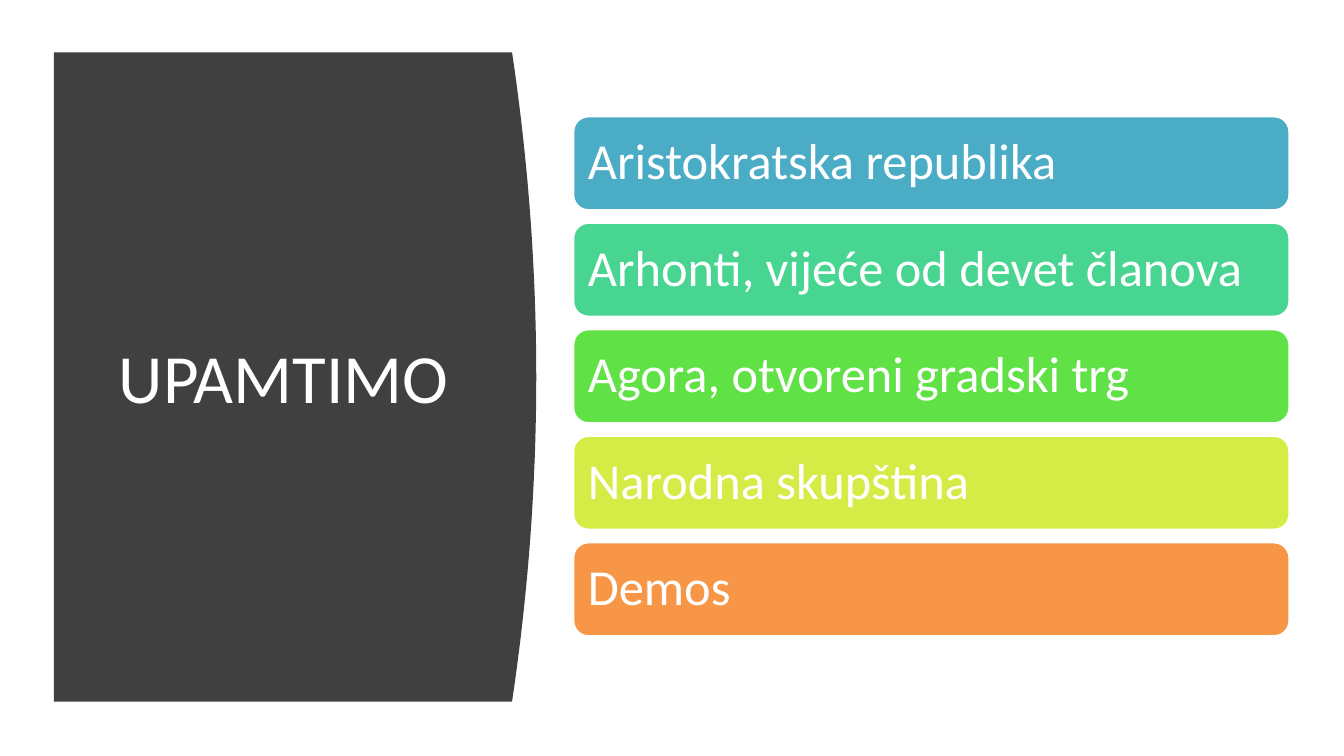
import pptx
import pptx.dml.color
import pptx.enum.shapes
import pptx.enum.text
import pptx.util
from pptx.util import Inches

FONT = "Calibri"
WHITE = "FFFFFF"
TERMS = [
    ("Aristokratska republika", "4BACC6"),
    ("Arhonti, vijeće od devet članova", "48D491"),
    ("Agora, otvoreni gradski trg", "60E146"),
    ("Narodna skupština", "D5EC46"),
    ("Demos", "F79646"),
]


def color(hex_string):
    return pptx.dml.color.RGBColor.from_string(hex_string)


def paint(shape, fill, line=None):
    shape.shadow.inherit = False
    shape.fill.solid()
    shape.fill.fore_color.rgb = color(fill)
    if line:
        shape.line.color.rgb = color(line)
        shape.line.width = pptx.util.Pt(2)
    else:
        shape.line.fill.background()


def write(shape, text, size, alignment, line_spacing):
    text_frame = shape.text_frame
    text_frame.word_wrap = True
    text_frame.vertical_anchor = pptx.enum.text.MSO_ANCHOR.MIDDLE
    text_frame.text = text
    paragraph = text_frame.paragraphs[0]
    paragraph.alignment = alignment
    paragraph.line_spacing = line_spacing
    font = paragraph.runs[0].font
    font.name = FONT
    font.size = pptx.util.Pt(size)
    font.color.rgb = color(WHITE)


def add_curved_panel(slide, left, top, edge, bottom, bulge, steps=40):
    """Draw a panel whose right edge bows outwards as a parabola."""
    points = []
    for step in range(steps + 1):
        position = step / steps
        x = edge + bulge * 4 * position * (1 - position)
        y = top + (bottom - top) * position
        points.append((Inches(x), Inches(y)))
    points.append((Inches(left), Inches(bottom)))
    builder = slide.shapes.build_freeform(Inches(left), Inches(top))
    builder.add_line_segments(points, close=True)
    paint(builder.convert_to_shape(), "404040")


def add_title(slide, text):
    box = slide.shapes.add_textbox(
        Inches(0.71), Inches(0.83), Inches(2.8), Inches(3.93))
    write(box, text, 37, pptx.enum.text.PP_ALIGN.CENTER, 1.0)


def add_term_bar(slide, top, text, fill):
    bar = slide.shapes.add_shape(
        pptx.enum.shapes.MSO_SHAPE.ROUNDED_RECTANGLE,
        Inches(4.26), Inches(top), Inches(5.34), Inches(0.71))
    paint(bar, fill, WHITE)
    bar.text_frame.margin_left = bar.text_frame.margin_right = Inches(0.08)
    write(bar, text, 27, pptx.enum.text.PP_ALIGN.LEFT, 0.9)


def main():
    # Widescreen page, 16:9
    presentation = pptx.Presentation()
    presentation.slide_width = Inches(10)
    presentation.slide_height = Inches(10 * 9 / 16)
    slide = presentation.slides.add_slide(presentation.slide_layouts[6])

    # Dark panel with the title
    add_curved_panel(slide, 0.4, 0.39, 3.81, 5.22, 0.18)
    add_title(slide, "UPAMTIMO")

    # Evenly spaced term bars
    first_top, last_top = 0.86, 4.03
    pitch = (last_top - first_top) / (len(TERMS) - 1)
    for index, (text, fill) in enumerate(TERMS):
        add_term_bar(slide, first_top + index * pitch, text, fill)

    presentation.save("out.pptx")


if __name__ == "__main__":
    main()
